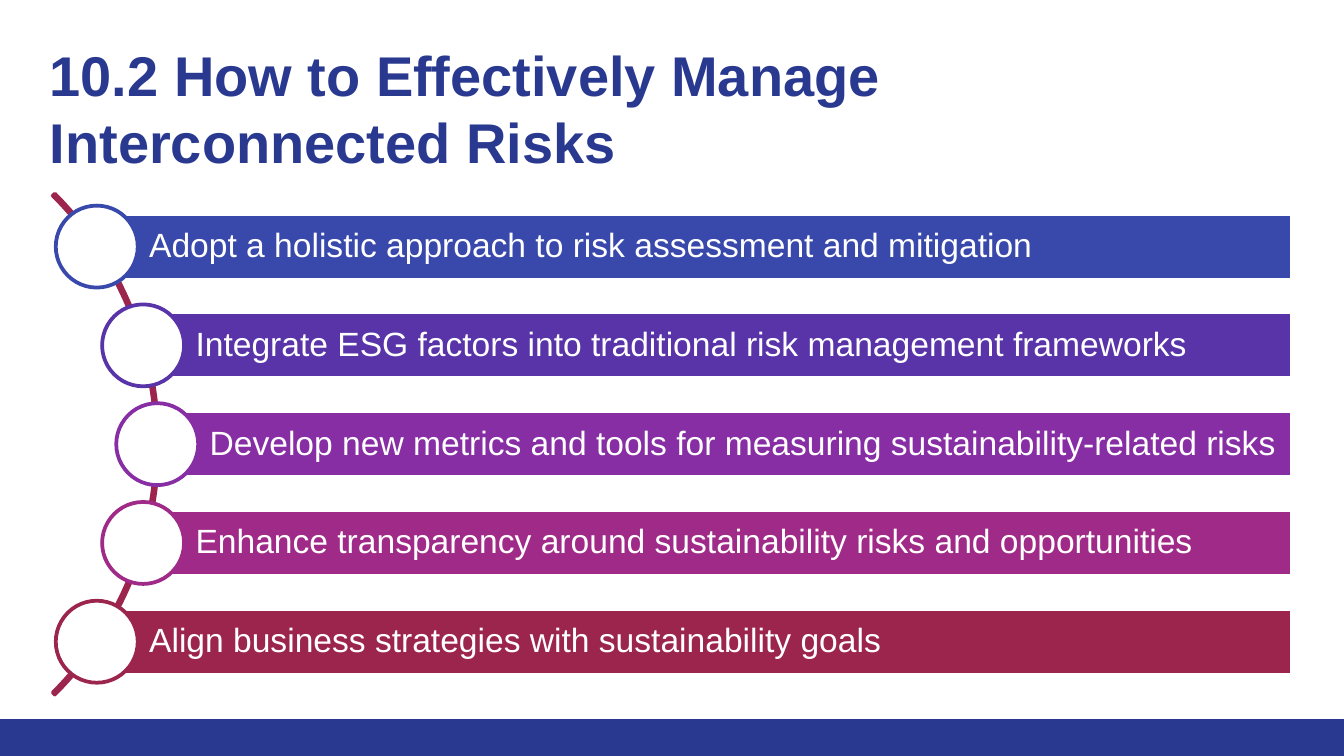
import math

import pptx
import pptx.dml.color
import pptx.enum.shapes
import pptx.enum.text
import pptx.util

Inches, Pt = pptx.util.Inches, pptx.util.Pt
RGB = pptx.dml.color.RGBColor.from_string
SHAPE = pptx.enum.shapes.MSO_SHAPE
ANCHOR = pptx.enum.text.MSO_ANCHOR
ALIGN = pptx.enum.text.PP_ALIGN

THEME = {
    "font": "Arial", "title_size": 30, "body_size": 18, "line": 2,
    "navy": "2A3990", "white": "FFFFFF", "arc": "9C254D",
}
WIDTH = 10
HEIGHT = WIDTH * 9 / 16
FOOTER_TOP = 5.35

# Arc circle, then the rows of the list
ARC_LEFT, ARC_TOP, ARC_SIZE = -4.09, 0.67, 5.27
ARC_X, ARC_Y = ARC_LEFT + ARC_SIZE / 2, ARC_TOP + ARC_SIZE / 2
DISC_ORBIT = ARC_SIZE / 2 - 0.01
ROWS_SPAN, BAR_HEIGHT, BAR_RIGHT, DISC = 2.94, 0.49, 9.61, 0.61
ROWS = [
    ("3949AB", "Adopt a holistic approach to risk assessment and mitigation"),
    ("5834A8", "Integrate ESG factors into traditional risk management frameworks"),
    ("882EA4", "Develop new metrics and tools for measuring sustainability-related risks"),
    ("A02A87", "Enhance transparency around sustainability risks and opportunities"),
    ("9C254D", "Align business strategies with sustainability goals"),
]
ROW_PITCH = ROWS_SPAN / (len(ROWS) - 1)

prs = pptx.Presentation()
prs.slide_width, prs.slide_height = Inches(WIDTH), Inches(HEIGHT)
s = prs.slides.add_slide(prs.slide_layouts[5])


def add_shape(kind, x, y, w, h, fill=None, line=None):
    sp = s.shapes.add_shape(kind, Inches(x), Inches(y), Inches(w), Inches(h))
    sp.shadow.inherit = False
    if fill:
        sp.fill.solid()
        sp.fill.fore_color.rgb = RGB(fill)
    else:
        sp.fill.background()
    if line:
        sp.line.color.rgb = RGB(line)
        sp.line.width = Pt(THEME["line"])
    else:
        sp.line.fill.background()
    return sp


def write(sp, text, size, color, anchor, insets, spacing, bold=False):
    tf = sp.text_frame
    tf.word_wrap = True
    tf.auto_size = pptx.enum.text.MSO_AUTO_SIZE.NONE
    tf.vertical_anchor = anchor
    tf.margin_left, tf.margin_top, tf.margin_right, tf.margin_bottom = map(Inches, insets)
    p = tf.paragraphs[0]
    p.alignment = ALIGN.LEFT
    p.line_spacing = spacing
    r = p.add_run()
    r.text = text
    r.font.name, r.font.size, r.font.bold = THEME["font"], Pt(size), bold
    r.font.color.rgb = RGB(color)


# Footer band
add_shape(SHAPE.RECTANGLE, 0, FOOTER_TOP, WIDTH, HEIGHT - FOOTER_TOP, THEME["navy"])

# Title
title = s.shapes.title
title.left, title.top, title.width, title.height = map(Inches, (0.27, 0.2, 9.2, 0.89))
write(title, "10.2 How to Effectively Manage Interconnected Risks", THEME["title_size"],
      THEME["navy"], ANCHOR.TOP, (0.1, 0.1, 0.1, 0.1), 1.0, bold=True)

# Arc from 315 to 45 degrees, behind the rows
arc = add_shape(SHAPE.BLOCK_ARC, ARC_LEFT, ARC_TOP, ARC_SIZE, ARC_SIZE, line=THEME["arc"])
for i, value in enumerate((189, 27, 0.004)):
    arc.adjustments[i] = value

# Each row starts where its centre line meets the arc
for i, (color, text) in enumerate(ROWS):
    dy = i * ROW_PITCH - ROWS_SPAN / 2
    x, y = ARC_X + math.sqrt(DISC_ORBIT ** 2 - dy ** 2), ARC_Y + dy
    bar = add_shape(SHAPE.RECTANGLE, x, y - BAR_HEIGHT / 2, BAR_RIGHT - x, BAR_HEIGHT,
                    color, THEME["white"])
    write(bar, text, THEME["body_size"], THEME["white"], ANCHOR.MIDDLE,
          (0.39, 0.05, 0.05, 0.05), 0.9)
    add_shape(SHAPE.OVAL, x - DISC / 2, y - DISC / 2, DISC, DISC, THEME["white"], color)

prs.save("out.pptx")
